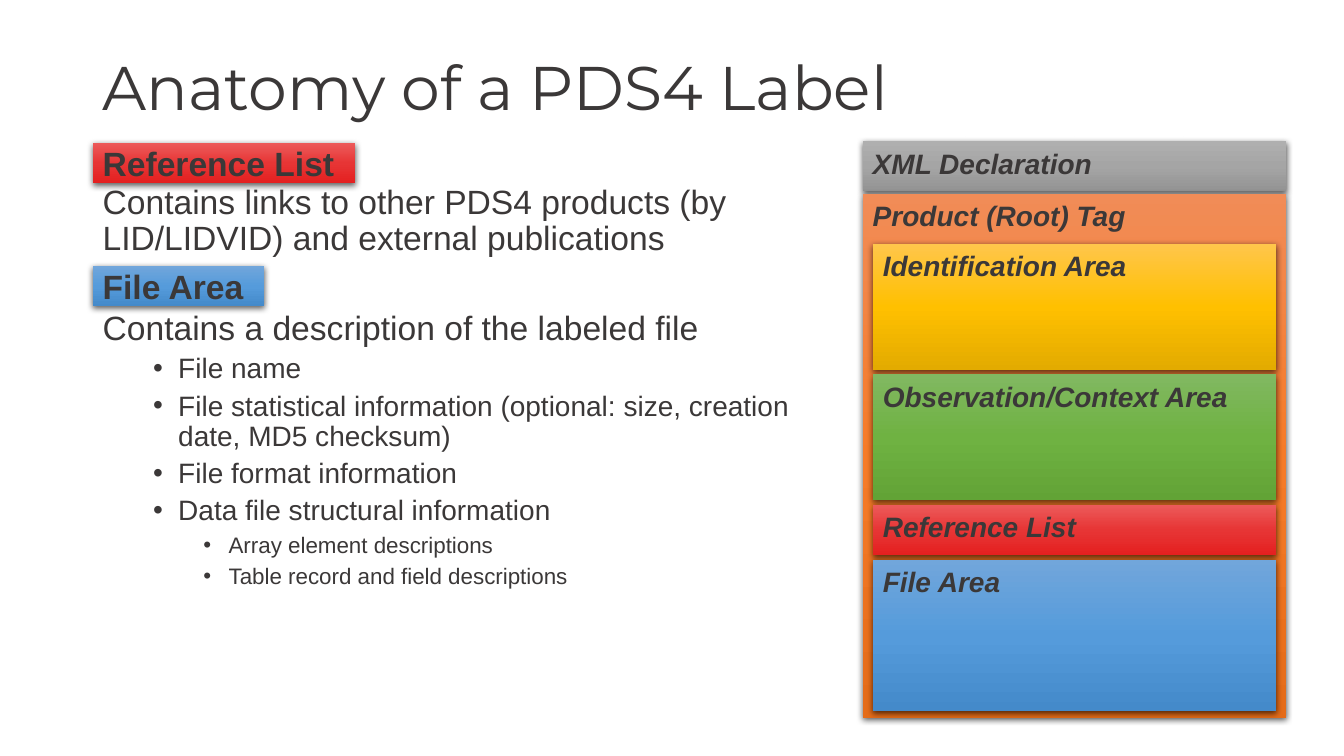
"""Build a slide on the anatomy of a PDS4 label."""
import pptx
import pptx.util
import pptx.oxml
import pptx.dml.color
import pptx.enum.shapes
import pptx.enum.text

ANCHOR = pptx.enum.text.MSO_ANCHOR
SPACE = 'xmlns:a="http://schemas.openxmlformats.org/drawingml/2006/main"'
CELL = pptx.util.Inches(0.1)
LEFT, WIDE = 9.2, 75.4
COLORS = {
    "text": "3B3838",
    "shade": "000000",
    "gray": ("AFAFAF", "A5A5A5", "939393"),
    "orange": ("F18C57", "F67B28", "E56C19"),
    "gold": ("FFC64B", "FFC000", "E3AB00"),
    "green": ("81B861", "6FB242", "62A336"),
    "red": ("EC5A5A", "E73535", "E42020"),
    "blue": ("71A6DB", "559BDB", "448ACA"),
}


def write(para, text, size, face="Arial", bold=False, slant=False):
    para.alignment = pptx.enum.text.PP_ALIGN.LEFT
    run = para.add_run()
    run.text = text
    font = run.font
    font.name, font.size = face, pptx.util.Pt(size)
    font.bold, font.italic = bold, slant
    font.color.rgb = pptx.dml.color.RGBColor.from_string(COLORS["text"])


def block(col, row, cols, rows, hue, text, size, slant=True):
    box = slide.shapes.add_shape(
        pptx.enum.shapes.MSO_SHAPE.RECTANGLE,
        *(round(n * CELL) for n in (col, row, cols, rows)))
    box.line.fill.background()
    box.shadow.inherit = False
    stops = "".join(
        f'<a:gs pos="{i * 50000}"><a:srgbClr val="{tone}"/></a:gs>'
        for i, tone in enumerate(COLORS[hue]))
    props = box.fill._xPr
    props.insert(2, pptx.oxml.parse_xml(
        f'<a:gradFill {SPACE} rotWithShape="1"><a:gsLst>{stops}</a:gsLst>'
        '<a:lin ang="5400000" scaled="0"/></a:gradFill>'))
    props[-1].append(pptx.oxml.parse_xml(
        f'<a:outerShdw {SPACE} blurRad="57150" dist="19050" dir="5400000" '
        f'algn="ctr" rotWithShape="0"><a:srgbClr val="{COLORS["shade"]}">'
        '<a:alpha val="63000"/></a:srgbClr></a:outerShdw>'))
    frame = box.text_frame
    frame.word_wrap = True
    frame.vertical_anchor = ANCHOR.TOP
    write(frame.paragraphs[0], text, size, bold=True, slant=slant)
    return frame


deck = pptx.Presentation()
deck.slide_width, deck.slide_height = round(133.33 * CELL), 75 * CELL
slide = deck.slides.add_slide(deck.slide_layouts[6])

texts = [
    (4, 115, 10, ANCHOR.MIDDLE, "Montserrat", [
        (0, 44, 0, "Anatomy of a PDS4 Label")]),
    (17.9, WIDE, 8.5, ANCHOR.TOP, "Arial", [
        (0, 24, 10, "Contains links to other PDS4 products (by LID/LIDVID) "
                    "and external publications")]),
    (30.4, WIDE, 33.4, ANCHOR.TOP, "Arial", [
        (0, 24, 10, "Contains a description of the labeled file"),
        (1, 20, 5, "File name"),
        (1, 20, 5, "File statistical information (optional: size, creation "
                   "date, MD5 checksum)"),
        (1, 20, 5, "File format information"),
        (1, 20, 5, "Data file structural information"),
        (2, 16, 5, "Array element descriptions"),
        (2, 16, 5, "Table record and field descriptions")]),
]
for row, cols, rows, anchor, face, lines in texts:
    frame = slide.shapes.add_textbox(
        *(round(n * CELL) for n in (LEFT, row, cols, rows))).text_frame
    frame.word_wrap = True
    frame.vertical_anchor = anchor
    for i, (level, size, before, text) in enumerate(lines):
        para = frame.add_paragraph() if i else frame.paragraphs[0]
        para.level = level
        para.line_spacing = 0.9
        para.space_before = pptx.util.Pt(before)
        write(para, text, size, face)
        if level:
            props = para._p.get_or_add_pPr()
            props.set("marL", str(round((5 * level + 2.5) * CELL)))
            props.set("indent", str(round(-2.5 * CELL)))
            for tag in ('buFont typeface="Arial"', 'buChar char="•"'):
                name, attr = tag.split(" ")
                props.append(pptx.oxml.parse_xml(f"<a:{name} {SPACE} {attr}/>"))

head = block(LEFT, 14.2, 26, 4, "red", "Reference List", 24, slant=False)
head.margin_top = head.margin_bottom = 0
head = block(LEFT, 26.4, 17, 4, "blue", "File Area", 24, slant=False)
head.vertical_anchor = ANCHOR.MIDDLE

block(85.6, 14, 42, 5, "gray", "XML Declaration", 20)
block(85.6, 19.2, 42, 52, "orange", "Product (Root) Tag", 20)
row, gap = 24.2, 0.45
for hue, rows, text in [
    ("gold", 12.5, "Identification Area"),
    ("green", 12.5, "Observation/Context Area"),
    ("red", 5, "Reference List"),
    ("blue", 15, "File Area"),
]:
    block(86.6, row, 40, rows, hue, text, 20)
    row += rows + gap

deck.save("out.pptx")
